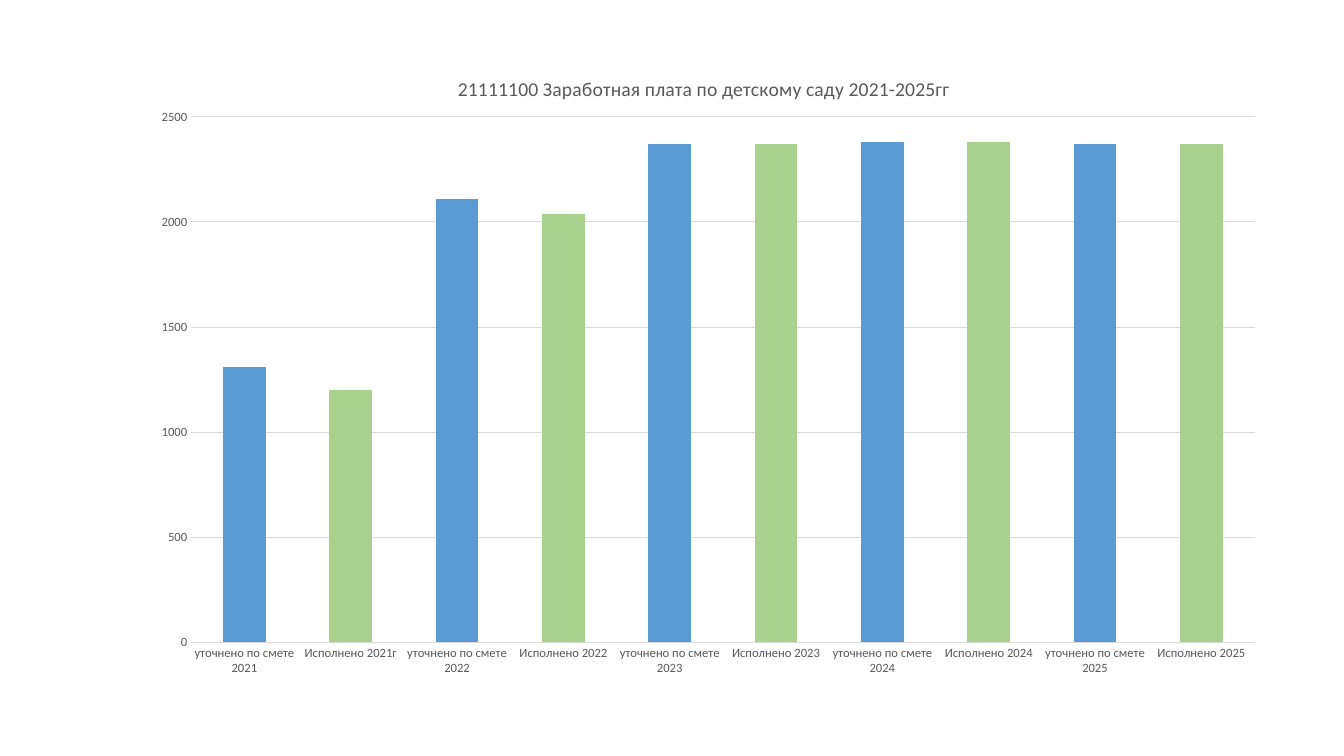
from dataclasses import dataclass

from lxml import etree
from pptx import Presentation
from pptx.chart.data import CategoryChartData
from pptx.dml.color import RGBColor
from pptx.enum import chart as ch
from pptx.oxml import ns
from pptx.util import Inches, Pt


@dataclass(frozen=True)
class Theme:
    font: str = "Calibri"
    text: RGBColor = RGBColor(0x59, 0x59, 0x59)
    grid: RGBColor = RGBColor(0xD9, 0xD9, 0xD9)
    plan: RGBColor = RGBColor(0x5B, 0x9B, 0xD5)
    fact: RGBColor = RGBColor(0xA9, 0xD1, 0x8E)
    title: Pt = Pt(14)
    base: Pt = Pt(10)
    label: Pt = Pt(9)


theme = Theme()


def style(font, size):
    font.name = theme.font
    font.size = size
    font.bold = False
    font.color.rgb = theme.text


def place(node, **box):
    """Fix a chart part at fractions of the chart's width and height."""
    for old in node.findall(ns.qn("c:layout")):
        node.remove(old)
    layout = etree.Element(ns.qn("c:layout"))
    manual = etree.SubElement(layout, ns.qn("c:manualLayout"))
    if "w" in box:
        etree.SubElement(manual, ns.qn("c:layoutTarget")).set("val", "inner")
    for key in ("xMode", "yMode"):
        etree.SubElement(manual, ns.qn(f"c:{key}")).set("val", "edge")
    for key, val in box.items():
        etree.SubElement(manual, ns.qn(f"c:{key}")).set("val", str(val))
    text = node.find(ns.qn("c:tx"))
    node.insert(0 if text is None else 1, layout)


deck = Presentation()
deck.slide_width, deck.slide_height = Inches(13.33), Inches(7.5)
slide = deck.slides.add_slide(deck.slide_layouts[6])

# Planned and actual pay for each year
pay = {
    2021: (1310, 1200),
    2022: (2110, 2040),
    2023: (2370, 2370),
    2024: (2380, 2380),
    2025: (2370, 2370),
}
data = CategoryChartData()
for year in pay:
    mark = "г" if year == 2021 else ""
    data.add_category(f"уточнено по смете {year}")
    data.add_category(f"Исполнено {year}{mark}")
data.add_series("Series 1", [val for pair in pay.values() for val in pair])

frame = slide.shapes.add_chart(
    ch.XL_CHART_TYPE.COLUMN_CLUSTERED,
    Inches(1.33), Inches(0.46), Inches(11.34), Inches(6.36), data)
chart = frame.chart
style(chart.font, theme.base)
chart.has_legend = False

# Title
chart.has_title = True
title = chart.chart_title
title.include_in_layout = False
line = title.text_frame.paragraphs[0]
line.text = "21111100 Заработная плата по детскому саду 2021-2025гг"
style(line.runs[0].font, theme.title)
place(title._element, x=0.28, y=0.04)

# Columns
plot = chart.plots[0]
plot.gap_width = 150
plot.vary_by_categories = False
bars = plot.series[0]
bars.format.fill.solid()
bars.format.fill.fore_color.rgb = theme.plan
for i in range(1, 2 * len(pay), 2):
    fill = bars.points[i].format.fill
    fill.solid()
    fill.fore_color.rgb = theme.fact

# Axes
for axis in (chart.category_axis, chart.value_axis):
    style(axis.tick_labels.font, theme.label)
    axis.major_tick_mark = ch.XL_TICK_MARK.NONE
    axis.minor_tick_mark = ch.XL_TICK_MARK.NONE
    axis.format.line.fill.background()
scale = chart.value_axis
scale.minimum_scale, scale.maximum_scale, scale.major_unit = 0, 2500, 500
scale.has_major_gridlines = True
grid = scale.major_gridlines.format.line
grid.color.rgb = theme.grid
grid.width = Pt(0.75)
area = chart._chartSpace.find(".//" + ns.qn("c:plotArea"))
place(area, x=0.05, y=0.11, w=0.93, h=0.82)

deck.save("out.pptx")
